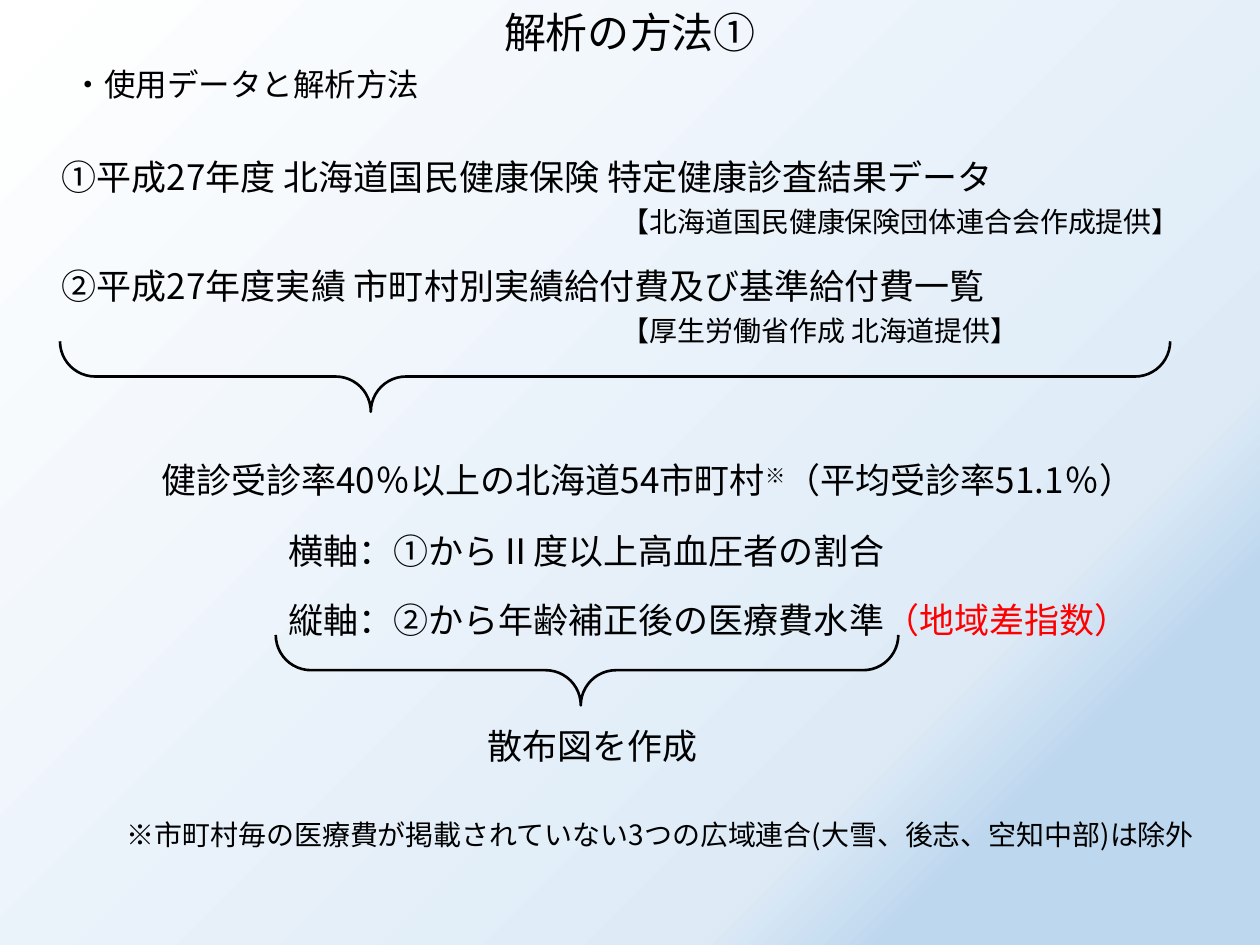
from dataclasses import dataclass

from lxml.etree import SubElement
from pptx import Presentation
from pptx.dml.color import RGBColor
from pptx.enum.shapes import MSO_SHAPE
from pptx.enum.text import MSO_ANCHOR, MSO_AUTO_SIZE, PP_ALIGN
from pptx.oxml.ns import qn
from pptx.util import Cm, Pt


@dataclass(frozen=True)
class Theme:
    font: str = "Noto Sans CJK JP"
    ink: str = "000000"
    accent: str = "FF0000"
    title: int = 24
    subtitle: int = 18
    body: int = 20
    note: int = 16
    brace_line: float = 1.5
    # Background stops: percent along the diagonal, colour
    backdrop: tuple = ((0, "FFFFFF"), (74, "DEEBF7"), (83, "BDD7EE"), (100, "BDD7EE"))


THEME = Theme()
TWO_CONTENT = 3
SOURCE_LEFT, SOURCE_WIDTH, SOURCE_HEIGHT = 0.99, 23.62, 1.96
PROVIDER_INDENT = 11.29
LINE_HEIGHT = 1.12


def paint_background(slide):
    fill = slide.background.fill
    fill.gradient()
    fill.gradient_angle = 315
    stops = slide.element.find(".//" + qn("a:gsLst"))
    for old_stop in list(stops):
        stops.remove(old_stop)
    for percent, color in THEME.backdrop:
        stop = SubElement(stops, qn("a:gs"), pos=str(percent * 1000))
        SubElement(stop, qn("a:srgbClr"), val=color)


def place(shape, left, top, width, height):
    shape.left, shape.top = Cm(left), Cm(top)
    shape.width, shape.height = Cm(width), Cm(height)


def prepare_frame(shape):
    frame = shape.text_frame
    frame.word_wrap = True
    frame.auto_size = MSO_AUTO_SIZE.SHAPE_TO_FIT_TEXT
    frame.vertical_anchor = MSO_ANCHOR.TOP
    return frame


def add_run(paragraph, text, size, color=THEME.ink, superscript=False):
    run = paragraph.add_run()
    run.text = text
    run.font.size = Pt(size)
    run.font.color.rgb = RGBColor.from_string(color)
    run.font.name = THEME.font
    properties = run._r.get_or_add_rPr()
    SubElement(properties, qn("a:ea"), typeface=THEME.font)
    if superscript:
        properties.set("baseline", "30000")


def format_list_line(paragraph, indent=0, space_before=0):
    """Remove the template's bullet and set the left indent."""
    paragraph.space_before = Pt(space_before)
    properties = paragraph._p.get_or_add_pPr()
    properties.set("marL", str(Cm(indent)))
    properties.set("indent", "0")
    SubElement(properties, qn("a:buNone"))


def fill_title(slide, text):
    title = slide.shapes.title
    place(title, 0, 0, 25.4, 1.27)
    paragraph = prepare_frame(title).paragraphs[0]
    paragraph.alignment = PP_ALIGN.CENTER
    add_run(paragraph, text, THEME.title)


def fill_source(placeholder, top, dataset, provider):
    """A data source with its provider indented below it."""
    place(placeholder, SOURCE_LEFT, top, SOURCE_WIDTH, SOURCE_HEIGHT)
    frame = prepare_frame(placeholder)
    dataset_line = frame.paragraphs[0]
    format_list_line(dataset_line)
    add_run(dataset_line, dataset, THEME.body)
    provider_line = frame.add_paragraph()
    format_list_line(provider_line, PROVIDER_INDENT, space_before=4)
    add_run(provider_line, provider, THEME.note)


def add_text(slide, left, top, width, size, *runs):
    """One line of text; each run is (text, optional run settings)."""
    height = size * LINE_HEIGHT * 2.54 / 72 + 0.25
    box = slide.shapes.add_textbox(Cm(left), Cm(top), Cm(width), Cm(height))
    paragraph = prepare_frame(box).paragraphs[0]
    for text, settings in runs:
        add_run(paragraph, text, size, **settings)


def add_brace(slide, left, top, length, depth, tip):
    """A brace that opens upward, with its tip at a share of its length."""
    # The box is laid out upright, then turned about its centre
    brace = slide.shapes.add_shape(
        MSO_SHAPE.LEFT_BRACE,
        Cm(left + (length - depth) / 2), Cm(top - (length - depth) / 2),
        Cm(depth), Cm(length))
    brace.rotation = 270
    brace.adjustments[0] = 0.5
    brace.adjustments[1] = tip
    brace.shadow.inherit = False
    brace.fill.background()
    brace.line.color.rgb = RGBColor.from_string(THEME.ink)
    brace.line.width = Pt(THEME.brace_line)


def main():
    deck = Presentation()
    deck.slide_width, deck.slide_height = Cm(25.4), Cm(19.05)
    slide = deck.slides.add_slide(deck.slide_layouts[TWO_CONTENT])
    paint_background(slide)

    # Headings
    fill_title(slide, "解析の方法①")
    add_text(slide, 1.22, 1.19, 8.13, THEME.subtitle, ("・使用データと解析方法", {}))

    # Data sources
    health_checks, expenses = slide.placeholders[1], slide.placeholders[2]
    fill_source(health_checks, 3.0,
                "①平成27年度 北海道国民健康保険 特定健康診査結果データ",
                "【北海道国民健康保険団体連合会作成提供】")
    fill_source(expenses, 5.21,
                "②平成27年度実績 市町村別実績給付費及び基準給付費一覧",
                "【厚生労働省作成 北海道提供】")
    add_brace(slide, 1.21, 6.88, 22.38, 1.42, tip=0.28)

    # Municipalities and axes
    add_text(slide, 3.0, 9.12, 21.87, THEME.body,
             ("健診受診率40％以上の北海道54市町村", {}),
             ("※", {"superscript": True}),
             ("（平均受診率51.1％）", {}))
    add_text(slide, 5.56, 10.54, 13.06, THEME.body,
             ("横軸：①からⅡ度以上高血圧者の割合", {}))
    add_text(slide, 5.56, 11.94, 17.86, THEME.body,
             ("縦軸：②から年齢補正後の医療費水準", {}),
             ("（地域差指数）", {"color": THEME.accent}))
    add_brace(slide, 5.56, 12.8, 12.55, 1.42, tip=0.49)

    # Result and footnote
    add_text(slide, 9.58, 14.48, 5.41, THEME.body, ("散布図を作成", {}))
    add_text(slide, 2.31, 16.36, 22.58, THEME.note,
             ("※市町村毎の医療費が掲載されていない3つの広域連合(大雪、後志、空知中部)は除外", {}))

    deck.save("out.pptx")


if __name__ == "__main__":
    main()
